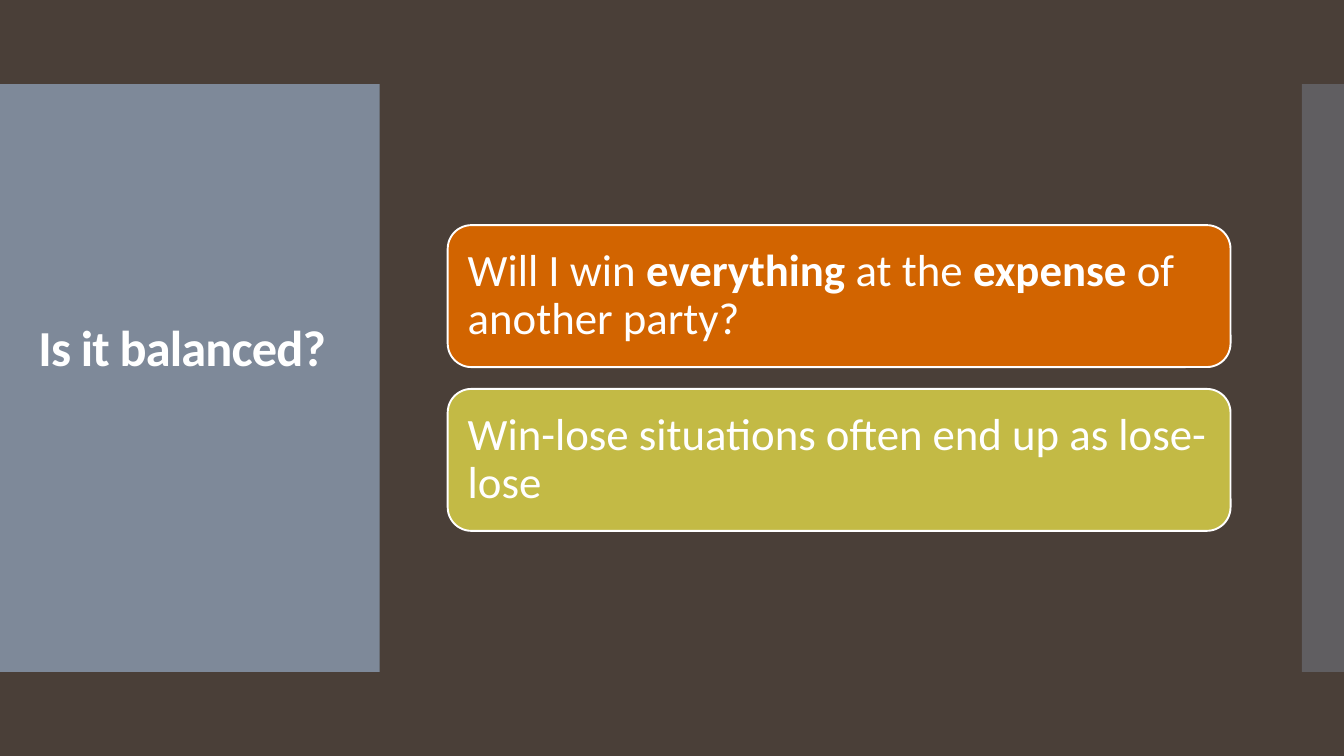
from dataclasses import dataclass

import pptx
import pptx.dml.color
import pptx.enum.shapes
import pptx.enum.text
import pptx.oxml
import pptx.oxml.ns
import pptx.util

# The slide is a grid of 16 columns by 9 rows
SLIDE_WIDTH = pptx.util.Inches(13.33)
SLIDE_HEIGHT = pptx.util.Inches(7.5)
COLUMN = SLIDE_WIDTH / 16
ROW = SLIDE_HEIGHT / 9

BACKGROUND, SLATE, WHITE = "4A3F38", "818E9F", "FFFFFF"


@dataclass(frozen=True)
class Area:
    """A place on the grid, in columns and rows."""
    column: float
    row: float
    columns: float
    rows: float

    def box(self) -> tuple[int, int, int, int]:
        return (round(self.column * COLUMN), round(self.row * ROW),
                round(self.columns * COLUMN), round(self.rows * ROW))


@dataclass(frozen=True)
class Panel:
    area: Area
    opacity: int


@dataclass(frozen=True)
class Card:
    color: str
    phrases: list[tuple[str, bool]]  # wording, bold


PANELS = [
    Panel(Area(0, 1, 4.52, 7), 95),
    Panel(Area(15.5, 1, 0.5, 7), 40),
]
TITLE_AREA = Area(0.34, 1.48, 3.86, 6.04)
CARDS = [
    Card("D26400", [("Will I win ", False), ("everything", True), (" at the ", False),
                    ("expense", True), (" of another party?", False)]),
    Card("C3BA45", [("Win-lose situations often end up as lose-lose", False)]),
]
FIRST_CARD = Area(5.33, 2.68, 9.32, 1.69)
CARD_PITCH = 1.95


def rgb(color: str) -> pptx.dml.color.RGBColor:
    return pptx.dml.color.RGBColor.from_string(color)


def add_block(slide, kind, area: Area, color: str, opacity: int = 100, outline: str = ""):
    block = slide.shapes.add_shape(kind, *area.box())
    block.shadow.inherit = False
    block.fill.solid()
    block.fill.fore_color.rgb = rgb(color)
    if opacity < 100:
        tint = block.fill._xPr.find(".//" + pptx.oxml.ns.qn("a:srgbClr"))
        alpha = pptx.oxml.parse_xml(
            f'<a:alpha {pptx.oxml.ns.nsdecls("a")} val="{opacity * 1000}"/>')
        tint.append(alpha)
    if outline:
        block.line.color.rgb = rgb(outline)
        block.line.width = pptx.util.Pt(1.35)
    else:
        block.line.fill.background()
    return block


def write(shape, phrases: list[tuple[str, bool]], *, size: float, spacing: float = 0,
          insets: tuple[float, float, float, float]) -> None:
    """Fill a shape with one left-aligned paragraph; insets are left, top, right, bottom."""
    frame = shape.text_frame
    frame.word_wrap = True
    frame.vertical_anchor = pptx.enum.text.MSO_ANCHOR.MIDDLE
    (frame.margin_left, frame.margin_top,
     frame.margin_right, frame.margin_bottom) = map(pptx.util.Inches, insets)
    paragraph = frame.paragraphs[0]
    paragraph.alignment = pptx.enum.text.PP_ALIGN.LEFT
    paragraph.line_spacing = 0.9
    for wording, bold in phrases:
        run = paragraph.add_run()
        run.text = wording
        run.font.name = "Calibri"
        run.font.size = pptx.util.Pt(size)
        run.font.bold = bold
        run.font.color.rgb = rgb(WHITE)
        if spacing:
            run.font._element.set("spc", str(round(spacing * 100)))


def main() -> None:
    presentation = pptx.Presentation()
    presentation.slide_width = SLIDE_WIDTH
    presentation.slide_height = SLIDE_HEIGHT
    slide = presentation.slides.add_slide(presentation.slide_layouts[6])
    slide.background.fill.solid()
    slide.background.fill.fore_color.rgb = rgb(BACKGROUND)
    shapes = pptx.enum.shapes.MSO_SHAPE

    # Side panels
    for panel in PANELS:
        add_block(slide, shapes.RECTANGLE, panel.area, SLATE, opacity=panel.opacity)

    # Title, raised slightly above the middle by its bottom inset
    title = slide.shapes.add_textbox(*TITLE_AREA.box())
    write(title, [("Is it balanced?", True)], size=36, spacing=-0.6,
          insets=(0.1, 0.05, 0.1, 0.6))

    # Stacked cards
    for index, card in enumerate(CARDS):
        area = Area(FIRST_CARD.column, FIRST_CARD.row + index * CARD_PITCH,
                    FIRST_CARD.columns, FIRST_CARD.rows)
        block = add_block(slide, shapes.ROUNDED_RECTANGLE, area, card.color, outline=WHITE)
        write(block, card.phrases, size=32, insets=(0.13, 0.13, 0.13, 0.13))

    presentation.save("out.pptx")


if __name__ == "__main__":
    main()
